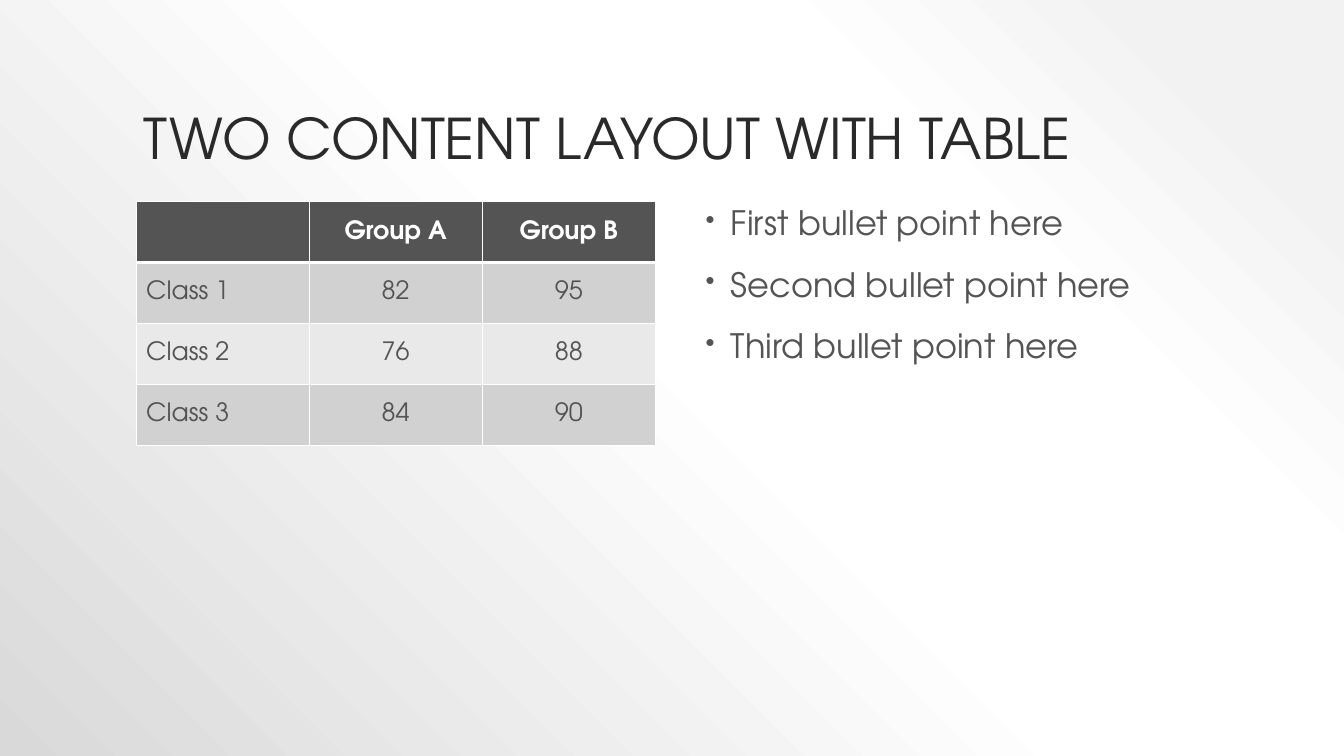
import pptx
import pptx.dml.color
import pptx.enum.text
import pptx.oxml
import pptx.oxml.ns
import pptx.util
from lxml import etree

Inches = pptx.util.Inches
Pt = pptx.util.Pt
qn = pptx.oxml.ns.qn
ALIGN = pptx.enum.text.PP_ALIGN
ANCHOR = pptx.enum.text.MSO_ANCHOR

FONT = "TeX Gyre Adventor"
COLORS = {
    "title": "2A2A2A",
    "body": "545454",
    "header": "545454",
    "band_dark": "D1D1D1",
    "band_light": "E9E9E9",
    "white": "FFFFFF",
}
BACKGROUND_STOPS = [(10, "F2F2F2"), (28, "FFFFFF"), (48, "FFFFFF"), (100, "D9D9D9")]

SCORES = [
    ["", "Group A", "Group B"],
    ["Class 1", "82", "95"],
    ["Class 2", "76", "88"],
    ["Class 3", "84", "90"],
]
POINTS = ["First bullet point here", "Second bullet point here", "Third bullet point here"]


def rgb(name):
    return pptx.dml.color.RGBColor.from_string(COLORS[name])


def add_bullet(paragraph, color):
    """Hang a small round bullet in front of a paragraph."""
    props = paragraph._p.get_or_add_pPr()
    props.set("marL", str(Inches(0.3)))
    props.set("indent", str(Inches(-0.25)))
    bullet_color = etree.SubElement(props, qn("a:buClr"))
    etree.SubElement(bullet_color, qn("a:srgbClr"), val=COLORS[color])
    etree.SubElement(props, qn("a:buSzPct"), val="80000")
    etree.SubElement(props, qn("a:buChar"), char="•")


def write_text(frame, lines, size=18, color="body", bold=False, align=ALIGN.LEFT,
               line_spacing=None, space_before=None, bullets=False):
    for index, line in enumerate(lines):
        paragraph = frame.paragraphs[0] if index == 0 else frame.add_paragraph()
        paragraph.alignment = align
        paragraph.line_spacing = line_spacing
        paragraph.space_before = space_before
        if bullets:
            add_bullet(paragraph, color)
        run = paragraph.add_run()
        run.text = line
        run.font.name = FONT
        run.font.size = Pt(size)
        run.font.bold = bold
        run.font.color.rgb = rgb(color)


def add_text_box(slide, box, lines, anchor=ANCHOR.TOP, **text_format):
    frame = slide.shapes.add_textbox(*map(Inches, box)).text_frame
    frame.word_wrap = True
    frame.vertical_anchor = anchor
    write_text(frame, lines, line_spacing=0.9, **text_format)


def set_background(slide):
    """Radial gradient centred on the top right corner."""
    slide.background.fill.gradient()
    gradient = next(slide.element.iter(qn("a:gradFill")))
    for child in list(gradient):
        gradient.remove(child)
    stops = etree.SubElement(gradient, qn("a:gsLst"))
    for position, color in BACKGROUND_STOPS:
        stop = etree.SubElement(stops, qn("a:gs"), pos=str(position * 1000))
        etree.SubElement(stop, qn("a:srgbClr"), val=color)
    circle = etree.SubElement(gradient, qn("a:path"), {"path": "circle"})
    etree.SubElement(circle, qn("a:fillToRect"), l="100000", b="100000")


def set_borders(cell, **widths):
    props = cell._tc.get_or_add_tcPr()
    for side in ("L", "R", "T", "B"):
        line = etree.SubElement(props, qn(f"a:ln{side}"), w=str(Pt(widths.get(side, 1))))
        fill = etree.SubElement(line, qn("a:solidFill"))
        etree.SubElement(fill, qn("a:srgbClr"), val=COLORS["white"])


def add_score_table(slide, box, rows):
    table = slide.shapes.add_table(len(rows), len(rows[0]), *map(Inches, box)).table
    for row, values in enumerate(rows):
        is_header = row == 0
        band = "header" if is_header else "band_dark" if row % 2 else "band_light"
        for column, value in enumerate(values):
            cell = table.cell(row, column)
            # A thick rule separates the header from the classes
            set_borders(cell, B=3 if is_header else 1, T=3 if row == 1 else 1)
            cell.fill.solid()
            cell.fill.fore_color.rgb = rgb(band)
            cell.vertical_anchor = ANCHOR.MIDDLE
            if value:
                write_text(cell.text_frame, [value], bold=is_header,
                           color="white" if is_header else "body",
                           align=ALIGN.CENTER if column else ALIGN.LEFT)


def main():
    deck = pptx.Presentation()
    deck.slide_width, deck.slide_height = Inches(13.33), Inches(7.5)
    slide = deck.slides.add_slide(deck.slide_layouts[6])
    set_background(slide)

    # Title
    add_text_box(slide, (1.33, 0.3, 10.67, 1.45), ["TWO CONTENT LAYOUT WITH TABLE"],
                 anchor=ANCHOR.BOTTOM, size=40, color="title")
    # Left: scores by class and group
    add_score_table(slide, (1.35, 2, 5.15, 2.42), SCORES)
    # Right: bullet points
    add_text_box(slide, (6.85, 2, 5.15, 4.75), POINTS, size=24,
                 space_before=Pt(18), bullets=True)

    deck.save("out.pptx")


if __name__ == "__main__":
    main()
